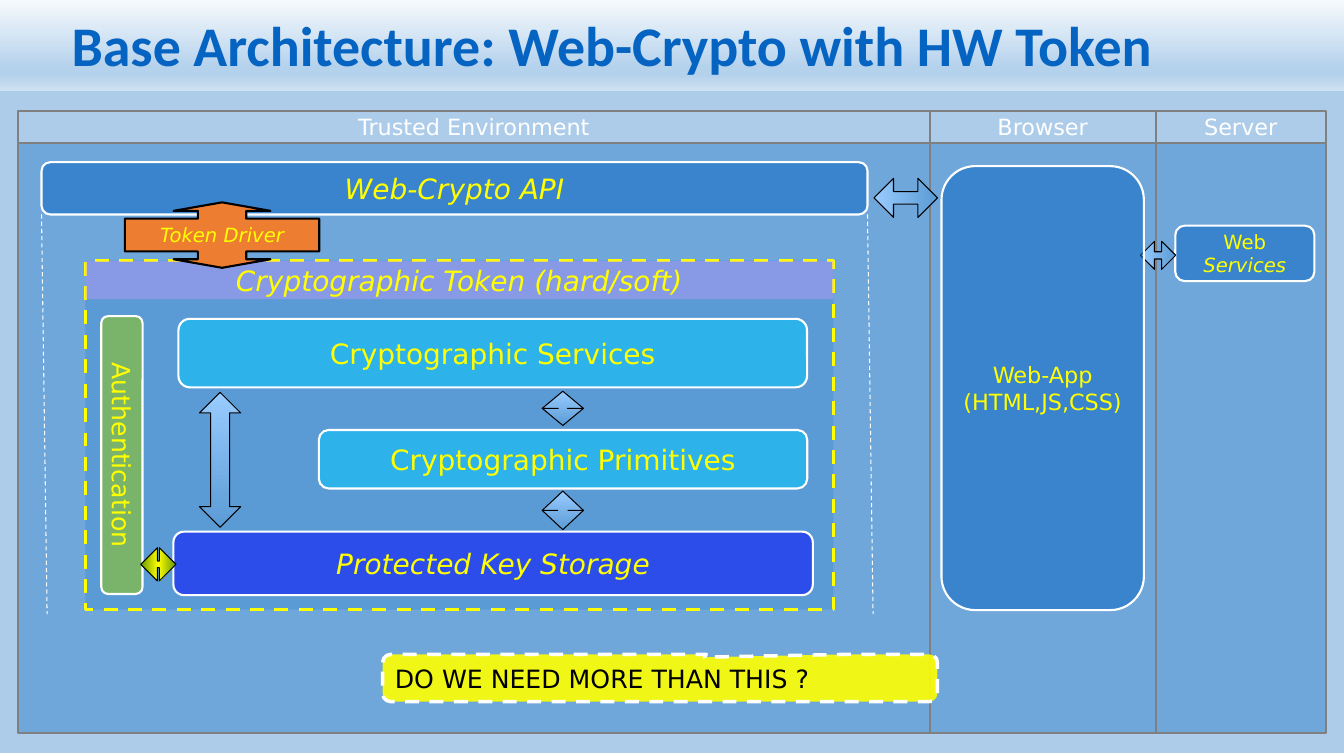
from lxml.etree import SubElement
from pptx import Presentation
from pptx.dml.color import RGBColor
from pptx.enum.dml import MSO_LINE
from pptx.enum.shapes import MSO_CONNECTOR, MSO_SHAPE as SHAPE
from pptx.enum.text import MSO_ANCHOR as ANCHOR, PP_ALIGN as ALIGN
from pptx.oxml.ns import qn
from pptx.util import Pt

COLORS = {
    "white": "FFFFFF", "black": "000000", "gray": "808080", "yellow": "FFFF00",
    "sky": "5B9BD5", "pale": "99CCFF", "navy": "0563C1", "cyan": "00CCFF",
    "blue": "0000FF", "lilac": "CC99FF", "lime": "99CC00", "olive": "669900",
    "orange": "ED7D31", "mist": "F7FAFD", "haze": "B5D2EC", "foam": "CEE1F2",
}
BLUE_FADE = [(0, "pale"), (100, "sky")]
GREEN_FADE = [(0, "olive"), (50, "yellow"), (100, "olive")]
HEADER_FADE = [(0, "mist"), (74, "haze"), (83, "haze"), (100, "foam")]


def rgb(name):
    return RGBColor.from_string(COLORS[name])


def write(p, text, size=20, color="yellow", italic=False, bold=False, font="DejaVu Sans"):
    r = p.add_run()
    r.text = text
    r.font.size, r.font.name = Pt(size), font
    r.font.italic, r.font.bold = italic, bold
    r.font.color.rgb = rgb(color)


class Board:
    def __init__(self, prs):
        self.s = prs.slides.add_slide(prs.slide_layouts[5])
        self.shapes = self.s.shapes

    def group(self):
        self.shapes = self.s.shapes.add_group_shape().shapes

    def ungroup(self):
        self.shapes = self.s.shapes

    def title(self, text, box):
        sp = self.s.shapes.title
        sp.left, sp.top, sp.width, sp.height = map(Pt, box)
        tf = sp.text_frame
        tf.vertical_anchor = ANCHOR.BOTTOM
        p = tf.paragraphs[0]
        p.alignment, p.line_spacing = ALIGN.LEFT, 0.9
        write(p, text, size=40, color="navy", bold=True, font="Calibri")
        self.s.shapes._spTree.append(sp._element)

    def stroke(self, line, color, width, dash):
        line.color.rgb, line.width = rgb(color), Pt(width)
        if dash:
            line.dash_style = MSO_LINE.DASH

    def fade(self, sp, stops):
        sp.fill.background()
        spPr = sp._element.spPr
        none = spPr.find(qn("a:noFill"))
        grad = SubElement(spPr, qn("a:gradFill"), rotWithShape="1")
        spPr.replace(none, grad)
        gs_lst = SubElement(grad, qn("a:gsLst"))
        for pos, name in stops:
            gs = SubElement(gs_lst, qn("a:gs"), pos=str(pos * 1000))
            SubElement(gs, qn("a:srgbClr"), val=COLORS[name])
        SubElement(grad, qn("a:lin"), ang="5400000", scaled="0")

    def shape(self, kind, box, fill=None, alpha=100, line=None, width=1.5, dash=False,
              adj=(), rot=0, text=(), align=ALIGN.CENTER, **fmt):
        sp = self.shapes.add_shape(kind, *map(Pt, box))
        sp.shadow.inherit = False
        sp.rotation = rot
        for i, value in enumerate(adj):
            sp.adjustments[i] = value
        if isinstance(fill, list):
            self.fade(sp, fill)
        elif fill:
            sp.fill.solid()
            sp.fill.fore_color.rgb = rgb(fill)
            if alpha < 100:
                clr = sp._element.spPr.find(qn("a:solidFill"))[0]
                SubElement(clr, qn("a:alpha"), val=str(alpha * 1000))
        else:
            sp.fill.background()
        if line:
            self.stroke(sp.line, line, width, dash)
        else:
            sp.line.fill.background()
        tf = sp.text_frame
        tf.word_wrap, tf.vertical_anchor = False, ANCHOR.MIDDLE
        for i, line_text in enumerate(text):
            p = tf.add_paragraph() if i else tf.paragraphs[0]
            p.alignment = align
            write(p, line_text, **fmt)
        return sp

    def rect(self, box, **kw):
        return self.shape(SHAPE.RECTANGLE, box, **kw)

    def block(self, text, box, fill="navy", **fmt):
        return self.shape(SHAPE.FLOWCHART_ALTERNATE_PROCESS, box, fill=fill, alpha=50,
                          line="white", text=text, **fmt)

    def arrow(self, box, head, fill=BLUE_FADE, rot=0):
        self.shape(SHAPE.UP_DOWN_ARROW, box, fill=fill, line="black", width=0.75,
                   adj=(0.5, head), rot=rot)

    def line(self, x1, y1, x2, y2, color, width, dash=False):
        c = self.shapes.add_connector(MSO_CONNECTOR.STRAIGHT, *map(Pt, (x1, y1, x2, y2)))
        self.stroke(c.line, color, width, dash)
        SubElement(c._element.spPr, qn("a:effectLst"))


def main():
    prs = Presentation()
    prs.slide_width, prs.slide_height = Pt(961), Pt(538.5)
    b = Board(prs)
    b.rect((0, 60, 961, 478.5), fill="sky", alpha=50)
    b.rect((0, 0, 961, 65), fill=HEADER_FADE)

    b.group()
    edges = [13, 664.8, 826.3, 948]
    for name, x1, x2 in zip(("Trusted Environment", "Browser", "Server"), edges, edges[1:]):
        b.rect((x1, 79.5, x2 - x1, 22.5), line="gray", text=[name], size=16, color="white")
    b.rect((13, 102, 935, 422.5), fill="sky", alpha=75, line="gray")
    for x in edges[1:-1]:
        b.line(x, 524.5, x, 102, "gray", 1.5)
    b.ungroup()

    b.title("Base Architecture: Web-Crypto with HW Token", (44, 0, 917, 60))
    b.arrow((633.6, 118.8, 28, 45.4), 0.32, rot=270)
    b.block(["Web-Crypto API"], (29.7, 116, 590.6, 37.4), italic=True)
    for x in (29.7, 620.3):
        b.line(x, 153.4, x + 4, 439.2, "white", 0.75, dash=True)

    b.group()
    b.rect((61, 186.5, 535, 249.5), fill="sky", line="yellow", width=2.5, dash=True)
    b.block(["Cryptographic Primitives"], (228, 307.5, 349.2, 41.8), "cyan")
    b.block(["Protected Key Storage"], (124, 380.2, 457.2, 45.4), "blue", italic=True)
    b.block(["Cryptographic Services"], (127.6, 228, 449.5, 49), "cyan")
    b.arrow((387.7, 351.2, 29.5, 27.6), 0.25)
    b.arrow((387.7, 279.8, 29.5, 24.5), 0.22)
    b.arrow((142.6, 280.6, 29.5, 96.5), 0.46)
    b.rect((61, 186.5, 535, 27.4), fill="lilac", alpha=40,
           text=["Cryptographic Token (hard/soft)"], italic=True)
    b.block(["Authentication"], (-12.2, 310.7, 198.7, 29.5), "lime", rot=90, size=18)
    b.arrow((101.3, 391, 23.8, 25.2), 0.2, fill=GREEN_FADE, rot=90)
    b.ungroup()

    b.shape(SHAPE.UP_DOWN_ARROW_CALLOUT, (89.3, 144.7, 139, 46.8), fill="orange", line="black",
            adj=(0.74, 0.74, 0.13, 0.5), text=["Token Driver"], size=14, italic=True)
    sp = b.block(["Web"], (840.4, 161.4, 99.4, 39.6), size=14)
    p = sp.text_frame.paragraphs[0]
    p.add_line_break()
    write(p, "Services", size=14, italic=True)
    b.arrow((818, 170, 20, 25.2), 0.26, rot=270)
    b.block(["Web-App", "(HTML,JS,CSS)"], (673.2, 118.8, 144.7, 317.5), size=16)
    b.shape(SHAPE.ROUNDED_RECTANGULAR_CALLOUT, (273.6, 468, 396.7, 33.8), fill="yellow",
            alpha=90, line="white", width=2.5, dash=True, adj=(0.08, -0.44, 0.17),
            text=["DO WE NEED MORE THAN THIS ?"], align=ALIGN.LEFT, size=18, color="black")
    prs.save("out.pptx")


if __name__ == "__main__":
    main()
